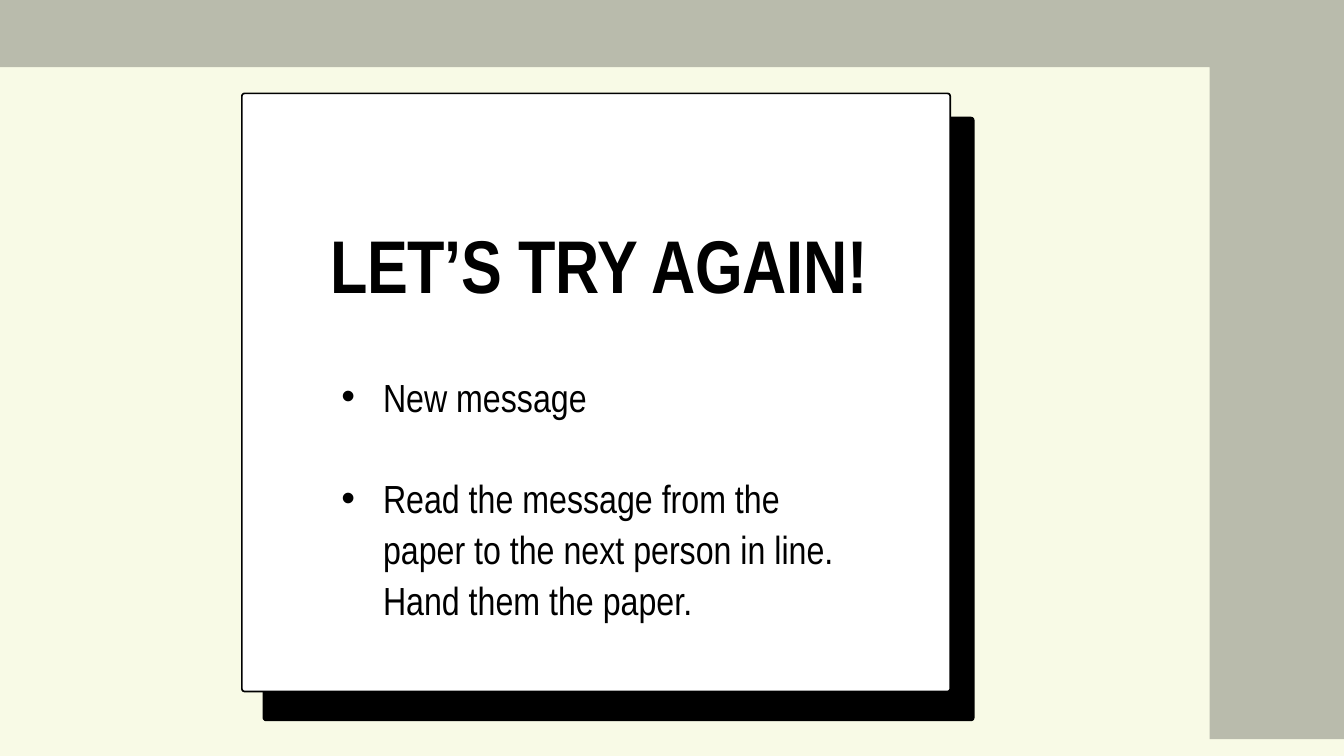
from pptx import Presentation
from pptx.dml.color import RGBColor
from pptx.enum import shapes, text
from pptx.oxml import parse_xml
from pptx.oxml.ns import nsdecls, qn
from pptx.util import Inches, Pt

COLORS = {"cream": "F8FAE6", "black": "000000", "white": "FFFFFF"}


class SlideBuilder:
    font = "Arial Narrow"
    corner = 0.04

    def __init__(self, slide):
        self.slide = slide

    def color(self, name):
        return RGBColor.from_string(COLORS[name])

    def background(self, name):
        fill = self.slide.background.fill
        fill.solid()
        fill.fore_color.rgb = self.color(name)

    def paint(self, shape, name):
        shape.shadow.inherit = False
        shape.fill.solid()
        shape.fill.fore_color.rgb = self.color(name)

    def band(self, points, name, opacity):
        builder = self.slide.shapes.build_freeform(*points[0], scale=Inches(1))
        builder.add_line_segments(points[1:], close=True)
        band = builder.convert_to_shape()
        self.paint(band, name)
        band.line.fill.background()
        tint = band.fill._xPr.find(qn("a:solidFill"))[0]
        tint.append(parse_xml(f'<a:alpha {nsdecls("a")} val="{opacity * 1000}"/>'))

    def card(self, left, top, width, height, name):
        card = self.slide.shapes.add_shape(
            shapes.MSO_SHAPE.ROUNDED_RECTANGLE,
            Inches(left), Inches(top), Inches(width), Inches(height))
        card.adjustments[0] = self.corner / min(width, height)
        self.paint(card, name)
        card.line.color.rgb = self.color("black")
        card.line.width = Pt(1.8)

    def place(self, holder, left, top, width, height):
        """Move a placeholder in front of the cards and clear its margins."""
        holder.left, holder.top = Inches(left), Inches(top)
        holder.width, holder.height = Inches(width), Inches(height)
        self.slide.shapes._spTree.append(holder._element)
        frame = holder.text_frame
        frame.margin_left = frame.margin_right = 0
        frame.margin_top = frame.margin_bottom = 0
        frame.word_wrap = True
        frame.auto_size = text.MSO_AUTO_SIZE.NONE
        frame.vertical_anchor = text.MSO_ANCHOR.TOP
        return frame

    def style(self, paragraph, size, leading, bold=False):
        paragraph.line_spacing = Pt(leading)
        paragraph.font.name = self.font
        paragraph.font.size = Pt(size)
        paragraph.font.bold = bold
        paragraph.font.color.rgb = self.color("black")

    def title(self, words, box):
        heading = self.place(self.slide.shapes.title, *box).paragraphs[0]
        run = heading.add_run()
        run.text = words
        run._r.get_or_add_rPr().set("spc", "-30")
        heading.alignment = text.PP_ALIGN.CENTER
        self.style(heading, 80, 141.6, bold=True)

    def bullets(self, items, box, leading=54.6, indent=0.62):
        frame = self.place(self.slide.placeholders[1], *box)
        for number, item in enumerate(items):
            point = frame.add_paragraph() if number else frame.paragraphs[0]
            point.text = item
            props = point._p.get_or_add_pPr()
            props.set("marL", str(Inches(indent)))
            props.set("indent", str(-Inches(indent)))
            props.append(parse_xml(f'<a:buFont {nsdecls("a")} typeface="Arial"/>'))
            props.append(parse_xml(f'<a:buChar {nsdecls("a")} char="•"/>'))
            point.space_before = Pt(leading if number else 0)
            self.style(point, 42, leading)


def main():
    deck = Presentation()
    deck.slide_width, deck.slide_height = Inches(20), Inches(11.25)
    page = SlideBuilder(deck.slides.add_slide(deck.slide_layouts[1]))

    # Backdrop: translucent band along the top and right edges
    page.background("cream")
    page.band([(0, 0), (19.07, 0), (19.07, 0.2), (20, 0.2), (20, 11.25),
               (18, 11.25), (18, 0.55), (0, 0.55)], "black", 25)

    # Card with its hard drop shadow
    page.card(3.92, 1.75, 10.57, 8.97, "black")
    page.card(3.6, 1.39, 10.54, 8.9, "white")

    # Text
    page.bullets(["New message",
                  "Read the message from the paper to the next person in line. "
                  "Hand them the paper."], (5.08, 5.49, 7.46, 3.78))
    page.title("LET’S TRY AGAIN!", (4.04, 2.62, 9.75, 1.72))

    deck.save("out.pptx")


if __name__ == "__main__":
    main()
